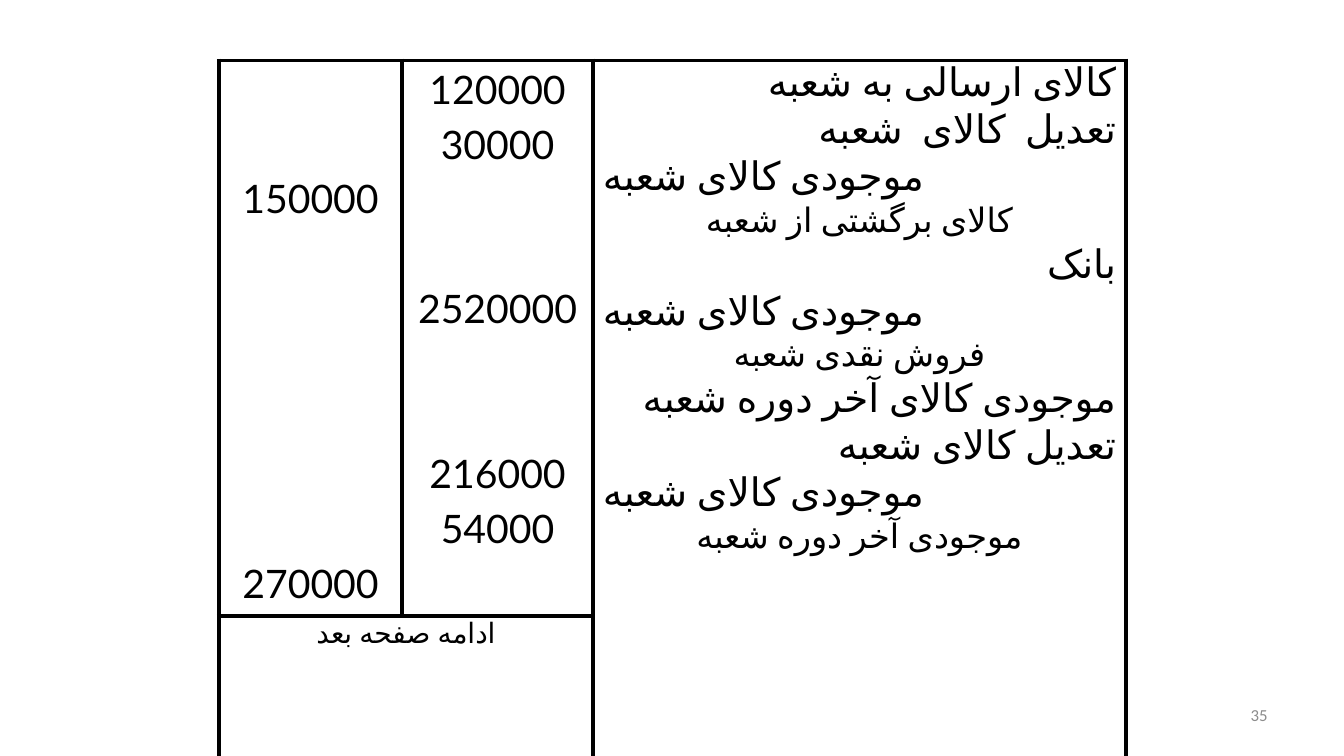
from dataclasses import dataclass

from lxml.etree import SubElement
from pptx import Presentation
from pptx.dml.color import RGBColor
from pptx.enum.text import MSO_ANCHOR, PP_ALIGN
from pptx.oxml.ns import qn
from pptx.util import Inches, Pt

BLACK = "000000"
GREY = "8C8C8C"
TABLE_FONT = "Lato"
AMOUNT_SIZE = 28
LINE_GAP = 0.2 * AMOUNT_SIZE
LINE_PITCH = 1.2 * AMOUNT_SIZE + LINE_GAP
CELL_MARGIN = 0.05
BORDER_POINTS = 3


@dataclass
class Line:
    text: str
    size: int = AMOUNT_SIZE
    align: PP_ALIGN = PP_ALIGN.CENTER
    space_before: float = 0
    font: str = TABLE_FONT
    color: str = BLACK
    right_to_left: bool = False


@dataclass
class CellContent:
    row: int
    column: int
    lines: list[Line]
    margin_top: float = CELL_MARGIN


def rgb(value: str) -> RGBColor:
    return RGBColor.from_string(value)


def amount(text: str, skipped_lines: int = 0) -> Line:
    """Describe an amount that stands some ledger lines below the previous one."""
    return Line(text, space_before=LINE_GAP + skipped_lines * LINE_PITCH)


def persian(text: str, align: PP_ALIGN, size: int = AMOUNT_SIZE) -> Line:
    return Line(text, size, align, 0.2 * size, right_to_left=True)


def debit(text: str) -> Line:
    return persian(text, PP_ALIGN.RIGHT)


def credit(text: str) -> Line:
    return persian(text, PP_ALIGN.LEFT)


def note(text: str, size: int = 24) -> Line:
    return persian(text, PP_ALIGN.CENTER, size)


def write_lines(frame, lines: list[Line]) -> None:
    for index, line in enumerate(lines):
        para = frame.add_paragraph() if index else frame.paragraphs[0]
        para.alignment = line.align
        para.space_before = Pt(line.space_before)
        span = para.add_run()
        span.text = line.text
        font_format = {"name": line.font, "size": Pt(line.size)}
        for name, value in font_format.items():
            setattr(span.font, name, value)
        span.font.color.rgb = rgb(line.color)
        if line.right_to_left:
            para.line_spacing = Pt(line.size)
            para._p.get_or_add_pPr().set("rtl", "1")
            span._r.get_or_add_rPr().set("lang", "fa-IR")


def add_borders(cell) -> None:
    properties = cell._tc.get_or_add_tcPr()
    for side in ("lnL", "lnR", "lnT", "lnB"):
        border = SubElement(properties, qn(f"a:{side}"), w=str(Pt(BORDER_POINTS)))
        fill = SubElement(border, qn("a:solidFill"))
        SubElement(fill, qn("a:srgbClr"), val=BLACK)


LEDGER = [
    CellContent(0, 0, [amount("150000"), amount("270000", 6)],
                margin_top=CELL_MARGIN + 2 * LINE_PITCH / 72),
    CellContent(0, 1, [
        amount("120000"),
        amount("30000"),
        amount("2520000", 2),
        amount("216000", 2),
        amount("54000"),
    ]),
    CellContent(0, 2, [
        debit("کالای ارسالی به شعبه"),
        debit("تعدیل  کالای  شعبه"),
        credit("موجودی کالای شعبه"),
        note("کالای برگشتی از شعبه"),
        debit("بانک"),
        credit("موجودی کالای شعبه"),
        note("فروش نقدی شعبه"),
        debit("موجودی کالای آخر دوره شعبه"),
        debit("تعدیل کالای شعبه"),
        credit("موجودی کالای شعبه"),
        note("موجودی آخر دوره شعبه"),
    ]),
    CellContent(1, 0, [note("ادامه صفحه بعد", 20)]),
]
COLUMN_WIDTHS = (1.82, 1.89, 5.29)
ROW_HEIGHTS = (5.51, 1.45)


def add_ledger(slide) -> None:
    table = slide.shapes.add_table(
        len(ROW_HEIGHTS), len(COLUMN_WIDTHS), Inches(2.17), Inches(0.6),
        Inches(sum(COLUMN_WIDTHS)), Inches(sum(ROW_HEIGHTS))).table
    table.first_row = False
    table.horz_banding = False
    for column, width in zip(table.columns, COLUMN_WIDTHS):
        column.width = Inches(width)
    for row, height in zip(table.rows, ROW_HEIGHTS):
        row.height = Inches(height)
    for cell in table.iter_cells():
        add_borders(cell)
        cell.fill.background()
    table.cell(0, 2).merge(table.cell(1, 2))
    table.cell(1, 0).merge(table.cell(1, 1))
    for content in LEDGER:
        cell = table.cell(content.row, content.column)
        cell.margin_top = Inches(content.margin_top)
        write_lines(cell.text_frame, content.lines)


def add_page_number(slide) -> None:
    box = slide.shapes.add_textbox(
        Inches(9.56), Inches(6.83), Inches(3.11), Inches(0.52))
    frame_format = {"word_wrap": True, "vertical_anchor": MSO_ANCHOR.MIDDLE}
    for name, value in frame_format.items():
        setattr(box.text_frame, name, value)
    write_lines(box.text_frame, [
        Line("35", 12, PP_ALIGN.RIGHT, font="Calibri", color=GREY)])


def main() -> None:
    deck = Presentation()
    deck.slide_width = Inches(13.33)
    deck.slide_height = Inches(7.5)
    page = deck.slides.add_slide(deck.slide_layouts[6])
    add_page_number(page)
    add_ledger(page)
    deck.save("out.pptx")


if __name__ == "__main__":
    main()
